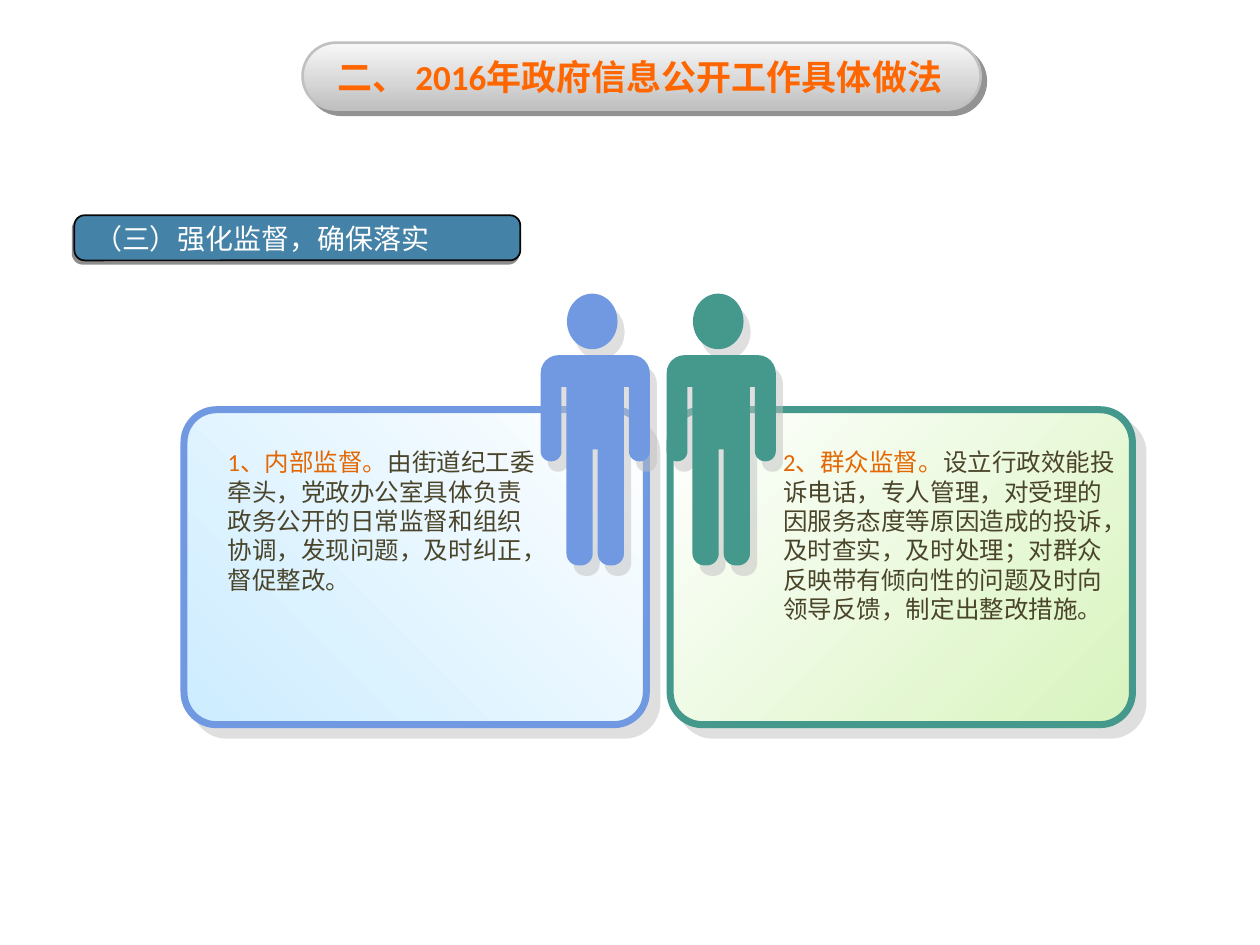
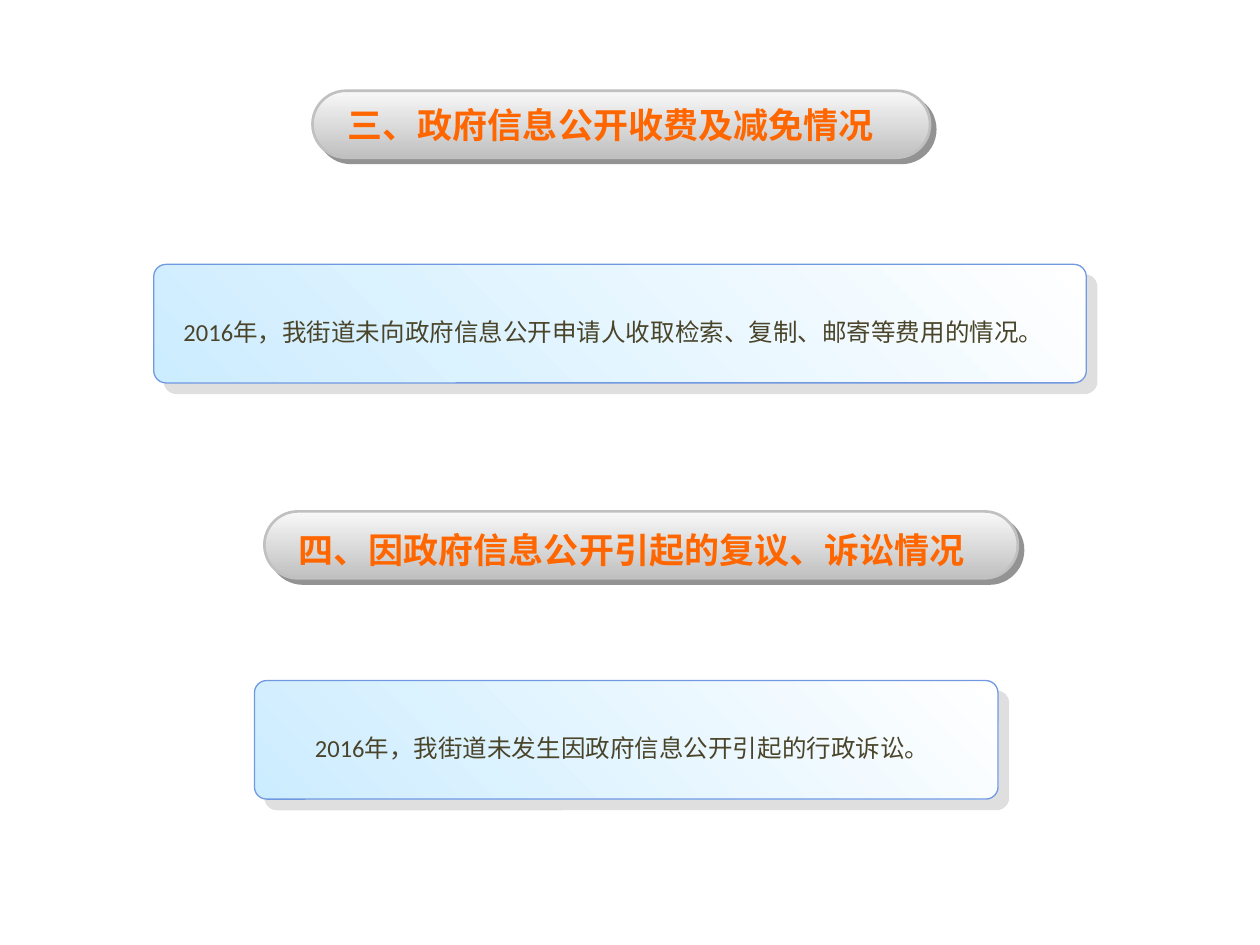
"""Build two slides on open government work in 2016."""
from dataclasses import dataclass
from math import cos, pi, sin

from lxml import etree
from pptx import Presentation, util as u
from pptx.dml.color import RGBColor
from pptx.enum import shapes, text
from pptx.oxml.ns import qn


@dataclass(frozen=True)
class Theme:
    """Colours, type sizes and shadows of the deck."""
    font: str = "Calibri"
    title: int = 20
    head: int = 16
    body: int = 14
    orange: str = "FF6600"
    lead: str = "E36803"
    ink: str = "4A452A"
    white: str = "FFFFFF"
    blue: str = "7099E2"
    green: str = "44988C"
    tag: str = "4582A7"
    edge: str = "080808"
    grey: str = "C0C0C0"
    sky: tuple = ("CCECFF", "FFFFFF", 45)
    leaf: tuple = ("FFFFFF", "D8F4BE", 315)
    steel: tuple = ("F8F8F8", "C0C0C0", 270)
    soft: tuple = ("C0C0C0", 8.5, 45)
    cast: tuple = ("C0C0C0", 7.2, 56)
    deep: tuple = ("292929", 4.2, 45)
    thin: tuple = ("1C1C1C", 2.2, 117)


T = Theme()

TITLES = [
    (0, "二、 2016年政府信息公开工作具体做法", (6.1, 0.86, 13.67), (6.55, 0.99, 13.21, 1.12)),
    (1, "三、政府信息公开收费及减免情况", (6.3, 1.83, 12.45), (6.76, 1.96, 11.4, 1.96)),
    (1, "四、因政府信息公开引起的复议、诉讼情况", (5.33, 10.31, 15.19), (5.77, 10.52, 14.76, 1.12)),
]
TAG = "（三）强化监督，确保落实"
PANELS = [
    dict(left=3.71, mid=12, fill=T.sky, tone=T.blue, box=(4.34, 8.89, 6.78, 3.94),
         lead="1、内部监督。",
         rest="由街道纪工委牵头，党政办公室具体负责政务公开的日常监督和组织协调，"
              "发现问题，及时纠正，督促整改。"),
    dict(left=13.51, mid=14.54, fill=T.leaf, tone=T.green, box=(15.54, 8.89, 7.19, 4.62),
         lead="2、群众监督。",
         rest="设立行政效能投诉电话，专人管理，对受理的因服务态度等原因造成的投诉，"
              "及时查实，及时处理；对群众反映带有倾向性的问题及时向领导反馈，制定出整改措施。"),
]
NOTES = [
    ("2016年，我街道未向政府信息公开申请人收取检索、复制、邮寄等费用的情况。",
     (3.1, 5.33, 18.8, 2.39), (3.45, 6.15, 19.69, 2.62)),
    ("2016年，我街道未发生因政府信息公开引起的行政诉讼。",
     (5.13, 13.72, 14.99, 2.39), (6.1, 14.53, 13.21, 0.97)),
]
HALF = [(1.1, 0, 0.36), (1.1, 2.14, 0.2), (0.68, 2.14, 0.2), (0.68, 0.64, 0),
        (0.58, 0.64, 0), (0.58, 4.24, 0.24), (0.05, 4.24, 0.24), (0.05, 1.9, 0)]


def rgb(tone):
    return RGBColor.from_string(tone)


def shade(shape, cast):
    tone, dist, angle = cast
    shape.shadow.inherit = False
    fx = shape._element.spPr.find(qn("a:effectLst"))
    drop = etree.SubElement(fx, qn("a:outerShdw"), dist=str(u.Pt(dist)),
                            dir=str(angle * 60000), algn="ctr", rotWithShape="0")
    hue = etree.SubElement(drop, qn("a:srgbClr"), val=tone)
    etree.SubElement(hue, qn("a:alpha"), val="50000")


def paint(shape, fill, line, cast):
    if isinstance(fill, tuple):
        shape.fill.gradient()
        shape.fill.gradient_angle = fill[2]
        for stop, tone in zip(shape.fill.gradient_stops, fill):
            stop.color.rgb = rgb(tone)
    else:
        shape.fill.solid()
        shape.fill.fore_color.rgb = rgb(fill)
    if line:
        shape.line.color.rgb = rgb(line[0])
        shape.line.width = u.Pt(line[1])
    else:
        shape.line.fill.background()
    shade(shape, cast)


def block(slide, box, bend, fill, line, cast):
    kind = shapes.MSO_SHAPE.ROUNDED_RECTANGLE
    shape = slide.shapes.add_shape(kind, *map(u.Cm, box))
    shape.adjustments[0] = bend
    paint(shape, fill, line, cast)


def write(slide, box, runs, size, bold=False, gap=None):
    frame = slide.shapes.add_textbox(*map(u.Cm, box)).text_frame
    frame.word_wrap = True
    frame.vertical_anchor = text.MSO_ANCHOR.TOP
    para = frame.paragraphs[0]
    para.line_spacing = gap
    for words, tone in runs:
        run = para.add_run()
        run.text = words
        run.font.name = T.font
        run.font.size = u.Pt(size)
        run.font.bold = bold
        run.font.color.rgb = rgb(tone)


def unit(start, end):
    dx, dy = end[0] - start[0], end[1] - start[1]
    span = abs(dx) + abs(dy)
    return dx / span, dy / span


def trace(corners, steps=6):
    dots = []
    for i, (x, y, r) in enumerate(corners):
        if not r:
            dots.append((x, y))
            continue
        back = unit((x, y), corners[i - 1])
        on = unit((x, y), corners[(i + 1) % len(corners)])
        for k in range(steps + 1):
            a = k * pi / 2 / steps
            p, q = r * (1 - sin(a)), r * (1 - cos(a))
            dots.append((x + back[0] * p + on[0] * q, y + back[1] * p + on[1] * q))
    return dots


def person(slide, mid, tone):
    head = slide.shapes.add_shape(shapes.MSO_SHAPE.OVAL,
                                  *map(u.Cm, (mid - 0.57, 5.92, 1.02, 1.12)))
    whole = HALF + [(-x, y, r) for x, y, r in reversed(HALF)]
    dots = [(u.Cm(mid + x), u.Cm(7.16 + y)) for x, y in trace(whole)]
    pen = slide.shapes.build_freeform(*dots[0])
    pen.add_line_segments(dots[1:], close=True)
    for part in (head, pen.convert_to_shape()):
        paint(part, tone, None, T.cast)


def panel(slide, left, mid, fill, tone, box, lead, rest):
    block(slide, (left, 8.26, 9.32, 6.35), 0.103, fill, (tone, 4), T.soft)
    person(slide, mid, tone)
    write(slide, box, [(lead, T.lead), (rest, T.ink)], T.body)


def main():
    deck = Presentation()
    deck.slide_width, deck.slide_height = u.Cm(25.4), u.Cm(19.05)
    pages = [deck.slides.add_slide(deck.slide_layouts[6]) for _ in range(2)]
    first, last = pages
    for item in PANELS:
        panel(first, **item)
    block(first, (1.5, 4.34, 8.99, 0.91), 0.228, T.tag, (T.edge, 1), T.thin)
    write(first, (1.65, 4.34, 8.43, 4.01), [(TAG, T.white)], T.head)
    for words, card, box in NOTES:
        block(last, card, 0.103, T.sky, (T.blue, 0), T.soft)
        write(last, box, [(words, T.ink)], T.body, gap=1.2)
    for page, words, pill, box in TITLES:
        block(pages[page], (*pill, 1.35), 0.5, T.steel, (T.grey, 1.5), T.deep)
        write(pages[page], box, [(words, T.orange)], T.title, bold=True)
    deck.save("out.pptx")


if __name__ == "__main__":
    main()
